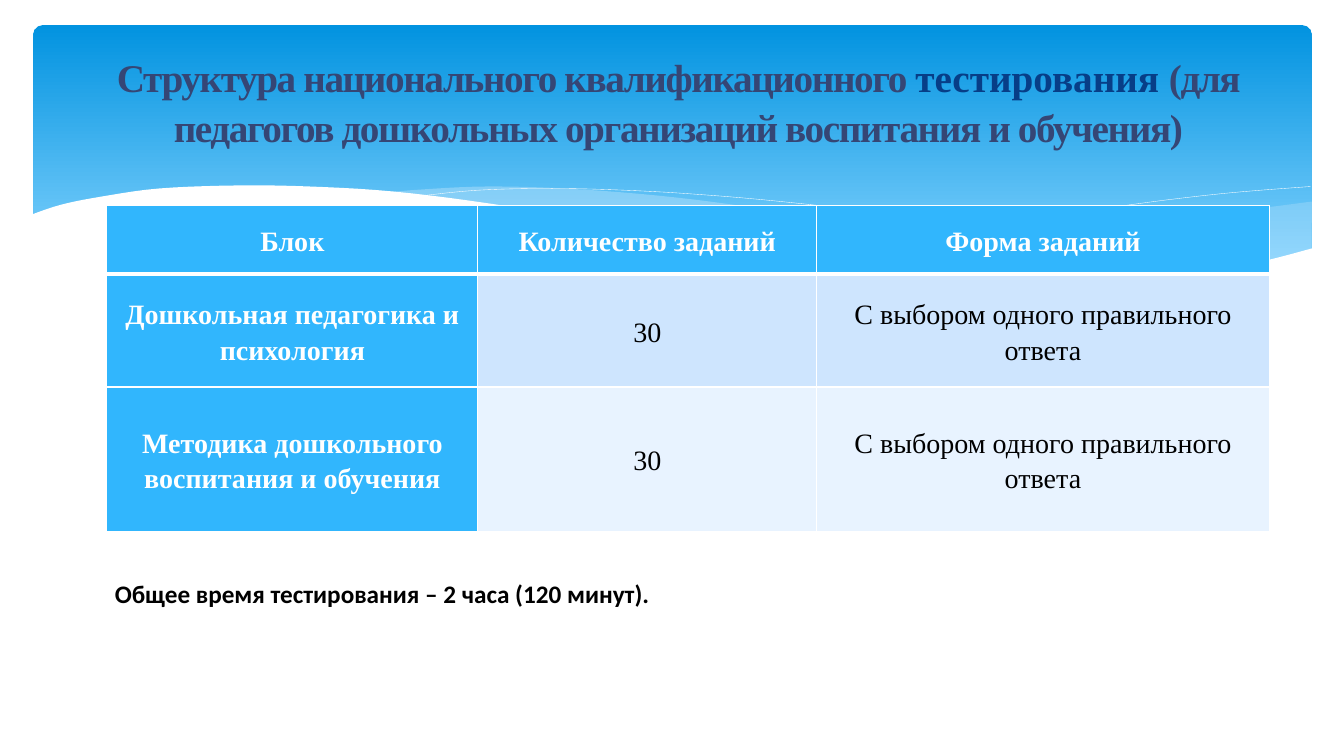
from lxml import etree
from pptx import Presentation
from pptx.dml.color import RGBColor
from pptx.enum.shapes import MSO_SHAPE
from pptx.enum.text import MSO_ANCHOR, PP_ALIGN
from pptx.oxml.ns import qn
from pptx.util import Inches, Pt

CENTER, LEFT = PP_ALIGN.CENTER, PP_ALIGN.LEFT
MIDDLE, TOP = MSO_ANCHOR.MIDDLE, MSO_ANCHOR.TOP
ROUNDED = MSO_SHAPE.ROUNDED_RECTANGLE

WHITE = RGBColor(0xFF, 0xFF, 0xFF)
BLACK = RGBColor(0, 0, 0)
SKY_TOP = RGBColor(0x02, 0x93, 0xE0)
SKY_BOTTOM = RGBColor(0x83, 0xD3, 0xFE)
HAZE = RGBColor(0xC6, 0xE7, 0xFC)
SLATE = RGBColor(0x35, 0x46, 0x75)
NAVY = RGBColor(0x07, 0x3E, 0x87)
HEADER = RGBColor(0x31, 0xB6, 0xFD)
BANDS = [RGBColor(0xCE, 0xE5, 0xFE), RGBColor(0xE8, 0xF3, 0xFF)]
SERIF, SANS = "Times New Roman", "Calibri"

TITLE = [
    ("Структура национального квалификационного ", SLATE, -100),
    ("тестирования ", NAVY, 0),
    ("(для педагогов дошкольных организаций воспитания и обучения)", SLATE, -100),
]
ROWS = [
    ("Блок", "Количество заданий", "Форма заданий"),
    ("Дошкольная педагогика и психология", "30", "С выбором одного правильного ответа"),
    ("Методика дошкольного воспитания и обучения", "30", "С выбором одного правильного ответа"),
]
COL_WIDTHS = [3.68, 3.36, 4.49]
ROW_HEIGHTS = [0.68, 1.12, 1.43]
NOTE = "Общее время тестирования – 2 часа (120 минут)."

SKY_BOX = (0.33, 0.25, 12.68, 2.7)
TITLE_BOX = (0.37, 0.11, 12.71, 1.78)
NOTE_BOX = (1.04, 5.69, 11.54, 0.67)
TABLE_BOX = (1.06, 2.04, sum(COL_WIDTHS), sum(ROW_HEIGHTS))

WAVES = [
    dict(curves=[
        [(13.01, 2), (12.27, 2.1), (11.47, 2.23), (10.38, 2.42), (9.41, 2.57), (8.82, 2.65)],
        [(8.82, 2.65), (9.58, 2.72), (10.25, 2.77), (10.99, 2.77), (11.74, 2.73),
         (12.38, 2.63), (13.01, 2.47)],
    ], fill=HAZE, alpha=29),
    dict(curves=[
        [(11.9, 2.73), (10.76, 2.6), (9.41, 2.4), (8.39, 2.22), (7.4, 2.05), (6.52, 1.94),
         (5.6, 1.87), (4.82, 1.85), (4.18, 1.88), (3.82, 1.91)],
        [(3.82, 1.91), (4.83, 2.03), (5.99, 2.22), (7.06, 2.4), (8.02, 2.55), (9.07, 2.68),
         (9.98, 2.76), (10.76, 2.78), (11.43, 2.77), (11.9, 2.73)],
    ], fill=HAZE, alpha=40),
    dict(curves=[
        [(4.12, 1.95), (4.7, 1.89), (5.35, 1.87), (6, 1.88), (6.8, 1.92), (7.75, 2),
         (8.86, 2.13), (10.14, 2.33), (11.08, 2.51), (12.1, 2.72)],
    ]),
    dict(curves=[
        [(8.18, 2.57), (8.96, 2.41), (9.97, 2.23), (11.15, 2.04), (12.13, 1.92), (13, 1.85)],
    ]),
    dict(curves=[
        [(13.03, 2.46), (12.4, 2.62), (11.67, 2.73), (10.78, 2.77), (9.92, 2.74), (8.91, 2.65),
         (8.04, 2.54), (7.06, 2.39), (5.96, 2.2), (4.86, 2.02), (3.9, 1.9), (3.06, 1.85),
         (2.35, 1.84), (1.58, 1.87), (1.01, 1.95), (0.61, 2.03), (0.31, 2.13)],
        [(0.31, 3.29), (13.03, 3.29)],
    ], fill=WHITE, alpha=100),
]


def box(lengths):
    return [Inches(v) for v in lengths]


def smooth(points, steps=5):
    padded = [points[0], *points, points[-1]]
    curve = [points[0]]
    for a, b, c, d in zip(padded, padded[1:], padded[2:], padded[3:]):
        for t in (i / steps for i in range(1, steps + 1)):
            curve.append(tuple(
                0.5 * (2 * q + (s - p) * t + (2 * p - 5 * q + 4 * s - u) * t ** 2
                       + (3 * q - p - 3 * s + u) * t ** 3)
                for p, q, s, u in zip(a, b, c, d)))
    return curve


def add_wave(shapes, curves, fill=None, alpha=100):
    points = [box(pt) for curve in curves for pt in smooth(curve)]
    builder = shapes.build_freeform(*points[0])
    builder.add_line_segments(points[1:], close=fill is not None)
    sp = builder.convert_to_shape()
    sp.shadow.inherit = False
    if fill is None:
        sp.fill.background()
        sp.line.color.rgb = WHITE
        sp.line.width = Pt(0.25)
        return
    sp.line.fill.background()
    sp.fill.solid()
    sp.fill.fore_color.rgb = fill
    color = sp.fill._xPr.find(qn("a:solidFill"))[0]
    etree.SubElement(color, qn("a:alpha"), val=str(alpha * 1000))


def add_run(p, text, color, **font):
    r = p.add_run()
    r.text = text
    r.font.color.rgb = color
    for name, value in font.items():
        setattr(r.font, name, value)
    return r


def add_text(shapes, lengths, anchor, align):
    tf = shapes.add_textbox(*box(lengths)).text_frame
    tf.word_wrap = True
    tf.vertical_anchor = anchor
    p = tf.paragraphs[0]
    p.alignment = align
    return p


def add_border(cell, side, points):
    ln = etree.Element(qn("a:ln" + side), w=str(Pt(points)))
    solid = etree.SubElement(ln, qn("a:solidFill"))
    etree.SubElement(solid, qn("a:srgbClr"), val=str(WHITE))
    cell._tc.get_or_add_tcPr().insert(0, ln)


def fill_cell(cell, text, row, col):
    strong = row == 0 or col == 0
    cell.fill.solid()
    cell.fill.fore_color.rgb = HEADER if strong else BANDS[row - 1]
    layout = dict(vertical_anchor=MIDDLE, margin_left=Inches(0.07), margin_right=Inches(0.07),
                  margin_top=0, margin_bottom=0)
    for name, value in layout.items():
        setattr(cell, name, value)
    p = cell.text_frame.paragraphs[0]
    p.alignment = CENTER
    p.line_spacing = 1.15
    add_run(p, text, WHITE if strong else BLACK, name=SERIF, size=Pt(20), bold=strong)
    widths = dict(B=3 if row == 0 else 1, T=3 if row == 1 else 1, R=1, L=1)
    for side, points in widths.items():
        add_border(cell, side, points)


def main():
    prs = Presentation()
    prs.slide_width, prs.slide_height = box((13.33, 7.5))
    shapes = prs.slides.add_slide(prs.slide_layouts[6]).shapes

    sky = shapes.add_shape(ROUNDED, *box(SKY_BOX))
    sky.adjustments[0] = 0.034
    sky.shadow.inherit = False
    sky.line.fill.background()
    sky.fill.gradient()
    sky.fill.gradient_angle = 270
    stops = [(0, SKY_TOP), (0.9, SKY_BOTTOM)]
    for stop, (position, color) in zip(sky.fill.gradient_stops, stops):
        stop.position = position
        stop.color.rgb = color
    for wave in WAVES:
        add_wave(shapes, **wave)

    p = add_text(shapes, TITLE_BOX, MIDDLE, CENTER)
    p.line_spacing = 1.05
    for text, color, spacing in TITLE:
        r = add_run(p, text, color, name=SERIF, size=Pt(28), bold=True)
        r.font._element.set("spc", str(spacing))

    p = add_text(shapes, NOTE_BOX, TOP, LEFT)
    add_run(p, NOTE, BLACK, name=SANS, size=Pt(18), bold=True)

    table = shapes.add_table(len(ROWS), len(COL_WIDTHS), *box(TABLE_BOX)).table
    for column, width in zip(table.columns, COL_WIDTHS):
        column.width = Inches(width)
    for i, (texts, height) in enumerate(zip(ROWS, ROW_HEIGHTS)):
        table.rows[i].height = Inches(height)
        for j, text in enumerate(texts):
            fill_cell(table.cell(i, j), text, i, j)

    prs.save("out.pptx")


if __name__ == "__main__":
    main()
